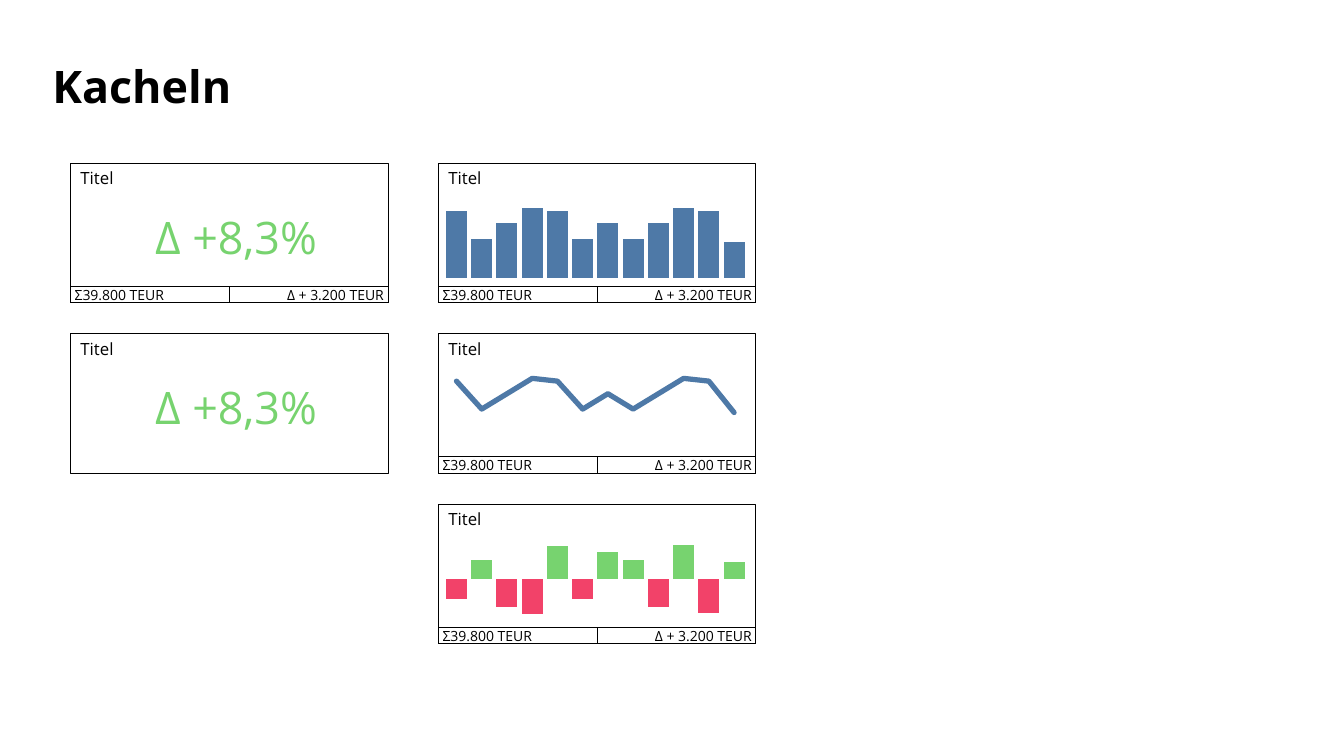
"""Build a slide of dashboard tiles with key figures and small charts."""
from pptx import Presentation
from pptx.chart.data import CategoryChartData
from pptx.dml.color import RGBColor
from pptx.enum import chart as ch, shapes as sh, text as tx
from pptx.oxml import parse_xml
from pptx.oxml.ns import nsdecls
from pptx.util import Pt

HEAD = "Kacheln"
LABEL = "Titel"
DELTA = "Δ +8,3%"
FEET = [("Σ39.800 TEUR", "LEFT"), ("Δ + 3.200 TEUR", "RIGHT")]
SALES = [96, 56, 78, 100, 96, 56, 78, 56, 78, 100, 96, 51]
DIFFS = [-56, 56, -78, -100, 96, -56, 78, 56, -78, 100, -96, 51]
BAR, LINE = ch.XL_CHART_TYPE.COLUMN_CLUSTERED, ch.XL_CHART_TYPE.LINE
TILES = [
    {"col": 0, "row": 0, "feet": True},
    {"col": 0, "row": 1, "feet": False},
    {"col": 1, "row": 0, "feet": True, "kind": BAR, "vals": SALES, "low": 0, "tone": "blue"},
    {"col": 1, "row": 1, "feet": True, "kind": LINE, "vals": SALES, "low": 0, "tone": "blue"},
    {"col": 1, "row": 2, "feet": True, "kind": BAR, "vals": DIFFS, "low": -112, "tone": "green"},
]
COLORS = {"ink": "000000", "blue": "4E79A7", "green": "77D36F", "red": "F24269"}
FONT = "Open Sans"
LEFT, TOP, STEP_X, STEP_Y = 50.4, 116.6, 262.8, 121.7
WIDE, HIGH, FOOT = 226.6, 99.4, 11.5
PLOT = {"x": 0.017, "y": 0.076, "w": 0.955, "h": 0.834}
PEAK = 112


def rgb(name):
    return RGBColor.from_string(COLORS[name])


def write(shape, words, size=12, color="ink", bold=False, align="LEFT", anchor="TOP",
          pad=None, wrap=True, space=None):
    frame = shape.text_frame
    frame.word_wrap = wrap
    frame.vertical_anchor = getattr(tx.MSO_ANCHOR, anchor)
    if pad is not None:
        frame.margin_left = frame.margin_right = Pt(pad)
        frame.margin_top = frame.margin_bottom = 0
    para = frame.paragraphs[0]
    para.alignment = getattr(tx.PP_ALIGN, align)
    if space:
        para.line_spacing = space
    run = para.add_run()
    run.text = words
    run.font.size, run.font.bold, run.font.name = Pt(size), bold, FONT
    run.font.color.rgb = rgb(color)


def frame_box(group, x, y, w, h):
    box = group.shapes.add_shape(sh.MSO_SHAPE.RECTANGLE, Pt(x), Pt(y), Pt(w), Pt(h))
    box.shadow.inherit = False
    box.fill.background()
    box.line.color.rgb = rgb("ink")
    box.line.width = Pt(0.25)
    return box


def set_plot(chart):
    parts = "".join(f'<c:{key} val="{val}"/>' for key, val in PLOT.items())
    layout = parse_xml(
        f'<c:layout {nsdecls("c")}><c:manualLayout><c:layoutTarget val="inner"/>'
        f'<c:xMode val="edge"/><c:yMode val="edge"/>{parts}</c:manualLayout></c:layout>')
    area = chart.plots[0]._element.getparent()
    for old in area.xpath("c:layout"):
        area.remove(old)
    area.insert(0, layout)


def add_graph(group, x, y, tile):
    data = CategoryChartData()
    data.categories = [str(n + 1) for n in range(len(tile["vals"]))]
    data.add_series("Series 1", tile["vals"])
    chart = group.shapes.add_chart(
        tile["kind"], Pt(x), Pt(y + 20.9), Pt(WIDE), Pt(67), data).chart
    chart.has_legend = chart.has_title = False
    chart.font.size, chart.font.name = Pt(10), "Calibri"
    chart.font.color.rgb = rgb("ink")
    axis = chart.value_axis
    axis.minimum_scale, axis.maximum_scale = tile["low"], PEAK
    axis.has_major_gridlines = False
    axis.visible = chart.category_axis.visible = False
    set_plot(chart)
    plot = chart.plots[0]
    plot.vary_by_categories = False
    row = plot.series[0]
    if tile["kind"] == LINE:
        row.smooth = False
        row.marker.style = ch.XL_MARKER_STYLE.NONE
        row.format.line.width = Pt(3.75)
        row.format.line.color.rgb = rgb(tile["tone"])
        row._element.xpath("c:spPr/a:ln")[0].set("cap", "rnd")
        return
    plot.gap_width, plot.overlap = 20, -27
    row.invert_if_negative = False
    row.format.fill.solid()
    row.format.fill.fore_color.rgb = rgb(tile["tone"])
    for n, val in enumerate(tile["vals"]):
        if val < 0:
            fill = row.points[n].format.fill
            fill.solid()
            fill.fore_color.rgb = rgb("red")


def add_tile(slide, tile):
    x, y = LEFT + tile["col"] * STEP_X, TOP + tile["row"] * STEP_Y
    group = slide.shapes.add_group_shape()
    write(frame_box(group, x, y, WIDE, HIGH), LABEL)
    if tile["feet"]:
        half = WIDE / 2
        for n, (words, align) in enumerate(FEET):
            foot = frame_box(group, x + n * half, y + HIGH - FOOT, half, FOOT)
            write(foot, words, size=10, align=align, pad=2.9)
    if "vals" in tile:
        add_graph(group, x, y, tile)
    else:
        box = group.shapes.add_textbox(Pt(x + 53.3), Pt(y + 29.5), Pt(131), Pt(46))
        write(box, DELTA, size=32, color="green", wrap=False)
        box.text_frame.auto_size = tx.MSO_AUTO_SIZE.SHAPE_TO_FIT_TEXT


def main():
    deck = Presentation()
    deck.slide_width, deck.slide_height = Pt(960), Pt(540)
    slide = deck.slides.add_slide(deck.slide_layouts[5])
    title = slide.shapes.title
    title.left, title.top, title.width, title.height = Pt(30.2), Pt(40.3), Pt(899.3), Pt(46)
    write(title, HEAD, size=32, bold=True, anchor="MIDDLE", space=0.9)
    for tile in TILES:
        add_tile(slide, tile)
    deck.save("out.pptx")


if __name__ == "__main__":
    main()
